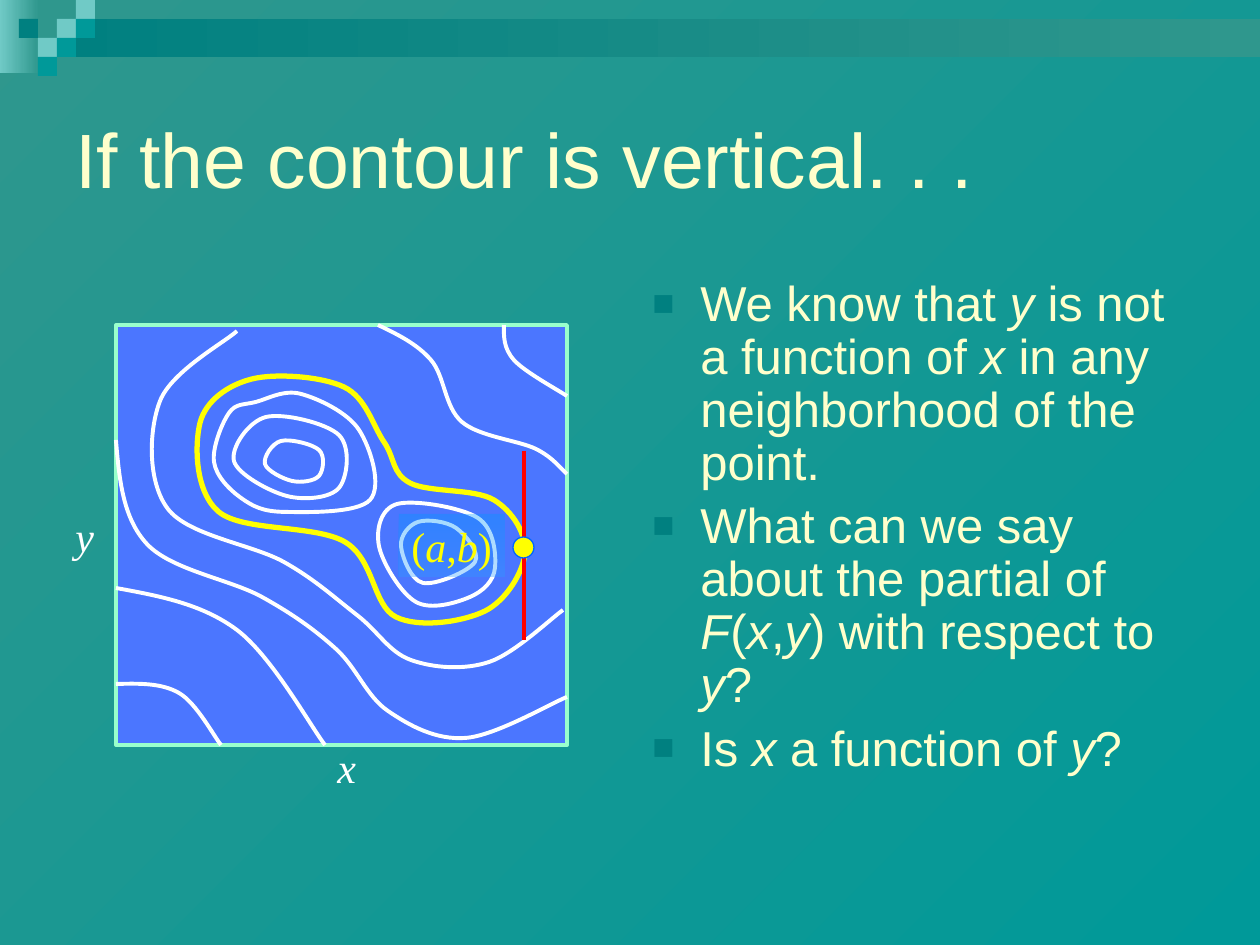
from lxml import etree
from pptx import Presentation
from pptx.dml.color import RGBColor
from pptx.enum.shapes import MSO_CONNECTOR, MSO_SHAPE
from pptx.enum.text import MSO_ANCHOR, PP_ALIGN
from pptx.oxml.ns import qn
from pptx.util import Emu, Pt

STRAIGHT = MSO_CONNECTOR.STRAIGHT
RECTANGLE, OVAL = MSO_SHAPE.RECTANGLE, MSO_SHAPE.OVAL
MIDDLE, TOP = MSO_ANCHOR.MIDDLE, MSO_ANCHOR.TOP
LEFT = PP_ALIGN.LEFT

SCALE = 914400 / 126
CELL = 19

CREAM = RGBColor(0xFF, 0xFF, 0xCC)
WHITE = RGBColor(0xFF, 0xFF, 0xFF)
YELLOW = RGBColor(0xFF, 0xFF, 0x00)
RED = RGBColor(0xFF, 0x00, 0x00)
MAP_BLUE = RGBColor(0x4B, 0x76, 0xFF)
MINT = RGBColor(0x99, 0xFF, 0xCC)
POINT_EDGE = RGBColor(0x00, 0x66, 0xFF)
LABEL_TOP = RGBColor(0x00, 0x99, 0xFF)
LABEL_BOTTOM = RGBColor(0x2E, 0x9C, 0xFF)
SEA = RGBColor(0x2F, 0x97, 0x8D)
TEAL = RGBColor(0x00, 0x99, 0x99)
DARK_TEAL = RGBColor(0x00, 0x80, 0x80)
PALE_TEAL = RGBColor(0x70, 0xCA, 0xC6)

HEADER_CELLS = {
    PALE_TEAL: [(3, 1), (4, 0), (2, 2)],
    TEAL: [(4, 1), (3, 2), (2, 3)],
    DARK_TEAL: [(1, 1)],
}
MAIN_CONTOUR = [(136, 54), (228, 62), (268, 117), (294, 158), (378, 175), (409, 228),
                (369, 286), (280, 292), (229, 217), (103, 187), (84, 98)]
CLOSED_CONTOURS = [
    [(150, 92), (118, 136), (171, 171), (223, 163), (223, 110)],
    [(302, 197), (285, 221), (307, 258), (359, 237), (340, 203)],
    [(140, 77), (113, 88), (98, 137), (125, 173), (168, 187), (254, 175), (243, 105), (185, 69)],
    [(281, 179), (263, 221), (300, 277), (354, 272), (379, 243), (362, 193)],
    [(165, 116), (149, 139), (176, 156), (203, 151), (203, 125)],
]
OPEN_CONTOURS = [
    [(0, 263), (121, 305), (209, 420)],
    [(262, 0), (315, 35), (346, 97), (420, 124), (451, 149)],
    [(0, 359), (63, 368), (105, 420)],
    [(0, 115), (31, 219), (146, 272), (220, 324), (272, 386), (350, 413), (451, 372)],
    [(388, 0), (398, 35), (451, 71)],
]
LONG_CONTOUR = [(121, 6), (44, 76), (52, 184), (168, 237), (241, 290),
                (295, 335), (373, 337), (447, 285)]
QUESTIONS = [
    "We know that |y| is not a function of |x| in any neighborhood of the point.",
    "What can we say about the partial of |F|(|x|,|y|) with respect to |y|?",
    "Is |x| a function of |y|?",
]


def px(length):
    return Emu(round(length * SCALE))


def set_gradient(fill, colors, angle):
    fill.gradient()
    fill.gradient_angle = (360 - angle) % 360
    for stop, color in zip(fill.gradient_stops, colors):
        stop.color.rgb = color


def add_block(slide, box, color=None, kind=RECTANGLE, line=None, weight=1):
    shape = slide.shapes.add_shape(kind, *map(px, box))
    shape.shadow.inherit = False
    if color is not None:
        shape.fill.solid()
        shape.fill.fore_color.rgb = color
    if line is None:
        shape.line.fill.background()
    else:
        shape.line.color.rgb = line
        shape.line.width = Pt(weight)
    return shape


def add_runs(paragraph, text, font, size, color, italic_first=False):
    paragraph.alignment = LEFT
    for index, part in enumerate(text.split("|")):
        run = paragraph.add_run()
        run.text = part
        run.font.name = font
        run.font.size = Pt(size)
        run.font.color.rgb = color
        run.font.italic = (index % 2 == 1) != italic_first


def draw_header(slide, box):
    left, top, width, height = box
    corner = add_block(slide, (left, top, 39, height))
    set_gradient(corner.fill, (PALE_TEAL, SEA), 0)
    band = add_block(slide, (left + 3 * CELL, top + CELL, width - 3 * CELL, 2 * CELL))
    set_gradient(band.fill, (DARK_TEAL, SEA), 0)
    for color, cells in HEADER_CELLS.items():
        for column, row in cells:
            add_block(slide, (left + column * CELL, top + row * CELL, CELL, CELL), color)


def draw_title(slide, box, text):
    frame = slide.shapes.add_textbox(*map(px, box)).text_frame
    frame.word_wrap = True
    frame.vertical_anchor = MIDDLE
    add_runs(frame.paragraphs[0], text, "Arial", 44, CREAM)


def set_bullet(paragraph, color):
    properties = paragraph._p.get_or_add_pPr()
    properties.set("marL", str(px(48)))
    properties.set("indent", str(-px(48)))
    bullet_color = etree.SubElement(properties, qn("a:buClr"))
    etree.SubElement(bullet_color, qn("a:srgbClr"), val=str(color))
    etree.SubElement(properties, qn("a:buSzPct"), val="75000")
    etree.SubElement(properties, qn("a:buFont"), typeface="Arial")
    etree.SubElement(properties, qn("a:buChar"), char="■")


def draw_questions(slide, box, questions):
    frame = slide.shapes.add_textbox(*map(px, box)).text_frame
    frame.word_wrap = True
    for index, question in enumerate(questions):
        paragraph = frame.add_paragraph() if index else frame.paragraphs[0]
        paragraph.line_spacing = 0.9
        paragraph.space_before = Pt(6)
        set_bullet(paragraph, DARK_TEAL)
        add_runs(paragraph, question, "Arial", 28, CREAM)


def curve_points(anchors, closed, straight_start):
    if closed:
        padded = [anchors[-1], *anchors, *anchors[:2]]
    else:
        padded = [anchors[0], *anchors, anchors[-1]]
    points = []
    for before, start, end, after in zip(padded, padded[1:], padded[2:], padded[3:]):
        leaving = [s + (e - b) / 6 for b, s, e in zip(before, start, end)]
        arriving = [e - (a - s) / 6 for s, e, a in zip(start, end, after)]
        if straight_start and not points:
            leaving = [(s + a) / 2 for s, a in zip(start, arriving)]
        points += [leaving, arriving, end]
    return points


def add_contour(slide, origin, anchors, color, weight, closed=False, straight_start=False):
    def place(point):
        return px(origin[0] + point[0]), px(origin[1] + point[1])

    builder = slide.shapes.build_freeform(*place(anchors[0]))
    points = curve_points(anchors, closed, straight_start)
    builder.add_line_segments([place(point) for point in points], close=closed)
    shape = builder.convert_to_shape()
    shape.shadow.inherit = False
    shape.fill.background()
    shape.line.color.rgb = color
    shape.line.width = Pt(weight)
    segments = list(shape._element.iter(qn("a:lnTo")))
    for first in range(0, len(segments), 3):
        curve = etree.Element(qn("a:cubicBezTo"))
        segments[first].addprevious(curve)
        for segment in segments[first:first + 3]:
            curve.append(segment[0])
            segment.getparent().remove(segment)


def add_label(shape, text, color, italic_first=False):
    frame = shape.text_frame
    frame.word_wrap = False
    frame.vertical_anchor = TOP
    add_runs(frame.paragraphs[0], text, "Times New Roman", 24, color, italic_first)


def draw_contour_map(slide, box):
    left, top = origin = box[:2]
    add_block(slide, box, MAP_BLUE, line=MINT, weight=2.25)
    add_contour(slide, origin, MAIN_CONTOUR, YELLOW, 3, closed=True)
    for anchors in CLOSED_CONTOURS:
        add_contour(slide, origin, anchors, WHITE, 2.25, closed=True)
    for anchors in OPEN_CONTOURS:
        add_contour(slide, origin, anchors, WHITE, 2.25, straight_start=True)
    add_contour(slide, origin, LONG_CONTOUR, WHITE, 2.25)

    for name, across, down in (("x", 209, 410), ("y", -53, 179)):
        axis_box = (left + across, top + down, 44, 63)
        add_label(slide.shapes.add_textbox(*map(px, axis_box)), name, WHITE, True)

    label = add_block(slide, (left + 283, top + 189, 106, 63))
    set_gradient(label.fill, (LABEL_TOP, LABEL_BOTTOM), 90)
    for color in label._element.spPr.find(qn("a:gradFill")).iter(qn("a:srgbClr")):
        etree.SubElement(color, qn("a:alpha"), val="35000")
    add_label(label, "(|a|,|b|)", YELLOW)

    tangent_x = left + 408
    tangent = slide.shapes.add_connector(
        STRAIGHT, px(tangent_x), px(top + 126), px(tangent_x), px(top + 315))
    tangent.line.color.rgb = RED
    tangent.line.width = Pt(2.25)
    etree.SubElement(tangent._element.spPr, qn("a:effectLst"))
    add_block(slide, (left + 397, top + 212, 21, 21), YELLOW, OVAL, POINT_EDGE, 0.75)


def main():
    presentation = Presentation()
    presentation.slide_width, presentation.slide_height = px(1260), px(945)
    slide = presentation.slides.add_slide(presentation.slide_layouts[6])
    set_gradient(slide.background.fill, (SEA, TEAL), 45)
    draw_header(slide, (0, 0, 1260, 73))
    draw_title(slide, (63, 63, 1134, 189), "If the contour is vertical. . .")
    draw_questions(slide, (640, 273, 557, 536), QUESTIONS)
    draw_contour_map(slide, (116, 325, 451, 420))
    presentation.save("out.pptx")


if __name__ == "__main__":
    main()
